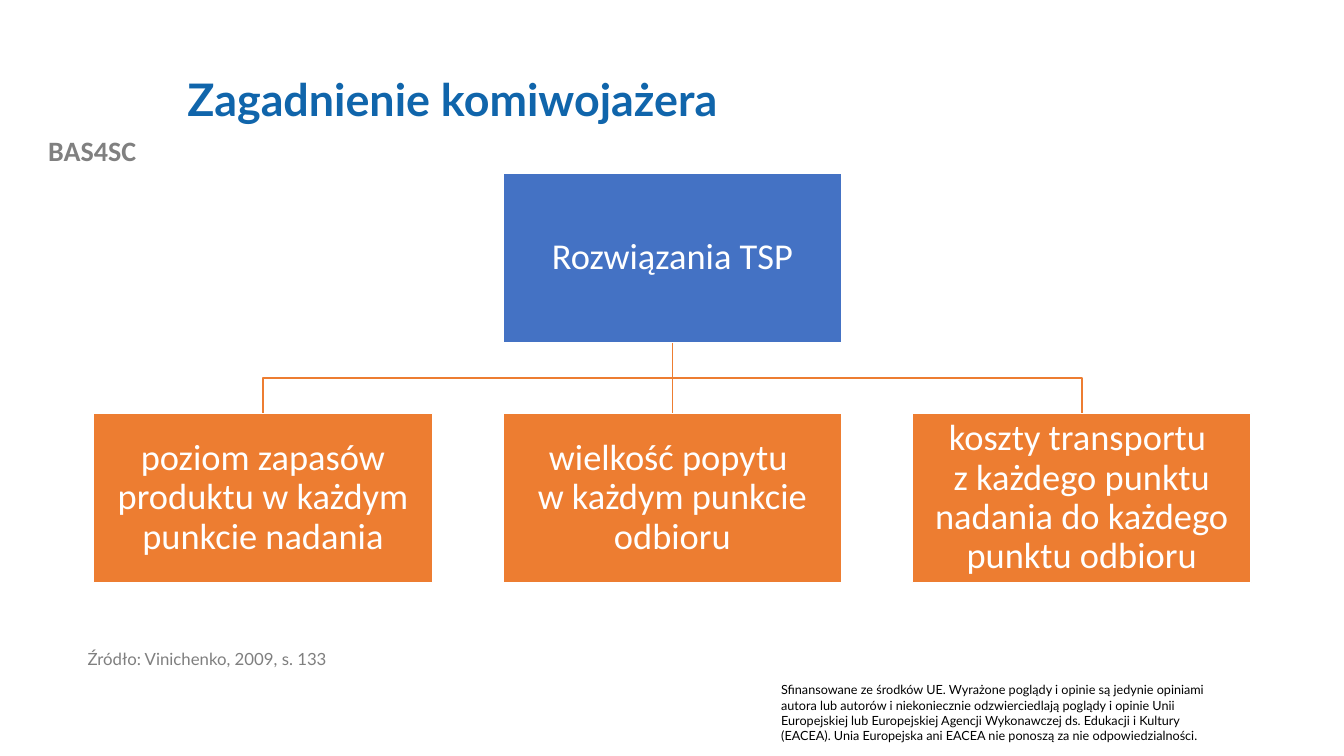
from pptx import Presentation
from pptx.dml.color import RGBColor as Rgb
from pptx.enum.shapes import MSO_CONNECTOR as Conn, MSO_SHAPE as Kind
from pptx.enum.text import MSO_ANCHOR as Anchor, PP_ALIGN as Align
from pptx.oxml.ns import qn
from pptx.util import Pt
from lxml.etree import SubElement

PX = 9144
HUES = {
    "blue": "4472C4", "orange": "ED7D31", "white": "FFFFFF", "black": "000000",
    "title": "1065AB", "label": "808080", "source": "7F7F7F",
}
WIDE, HIGH = 336, 168
LEFT, STEP = 93, 406
TOP, LOW = 172, 410
MID = LEFT + STEP + WIDE // 2
NOTE = (
    "Sfinansowane ze środków UE. Wyrażone poglądy i opinie są jedynie opiniami "
    "autora lub autorów i niekoniecznie odzwierciedlają poglądy i opinie Unii "
    "Europejskiej lub Europejskiej Agencji Wykonawczej ds. Edukacji i Kultury "
    "(EACEA). Unia Europejska ani EACEA nie ponoszą za nie odpowiedzialności."
)
CAUSES = [
    "poziom zapasów produktu w każdym punkcie nadania",
    "wielkość popytu \nw każdym punkcie odbioru",
    "koszty transportu \nz każdego punktu nadania do każdego punktu odbioru",
]


def hue(name):
    return Rgb.from_string(HUES[name])


def scale(*sizes):
    return [size * PX for size in sizes]


def write(frame, text, size, face, tint, bold=False, align=Align.LEFT,
          anchor=Anchor.TOP, space=1.0):
    frame.word_wrap = True
    frame.vertical_anchor = anchor
    para = frame.paragraphs[0]
    para.alignment = align
    para.line_spacing = space
    for turn, line in enumerate(text.split("\n")):
        if turn:
            para.add_line_break()
        run = para.add_run()
        run.text = line
        font = run.font
        font.size, font.name, font.bold = Pt(size), face, bold
        font.color.rgb = hue(tint)


def label(slide, area, text, size, face, tint, **style):
    box = slide.shapes.add_textbox(*scale(*area))
    write(box.text_frame, text, size, face, tint, **style)


def block(slide, left, top, text, tint):
    box = slide.shapes.add_shape(Kind.RECTANGLE, *scale(left, top, WIDE, HIGH))
    box.shadow.inherit = False
    box.fill.solid()
    box.fill.fore_color.rgb = hue(tint)
    box.line.color.rgb = hue("white")
    box.line.width = Pt(1)
    frame = box.text_frame
    frame.margin_left = frame.margin_right = 2 * PX
    frame.margin_top = frame.margin_bottom = 2 * PX
    write(frame, text, 26, "Calibri", "white", align=Align.CENTER,
          anchor=Anchor.MIDDLE, space=0.9)


def stroke(line):
    line.color.rgb = hue("orange")
    line.width = Pt(1)


def stem(slide, start, end):
    link = slide.shapes.add_connector(
        Conn.STRAIGHT, *scale(MID, start, MID, end))
    stroke(link.line)
    SubElement(link._element.spPr, qn("a:effectLst"))


def branch(slide, start, end, goal):
    bend = (start + end) // 2
    pen = slide.shapes.build_freeform(MID, start, scale=PX)
    pen.add_line_segments([(MID, bend), (goal, bend), (goal, end)], close=False)
    path = pen.convert_to_shape()
    path.shadow.inherit = False
    path.fill.background()
    stroke(path.line)


def tree(slide):
    base = TOP + HIGH
    for side in (1, -1):
        branch(slide, base, LOW, MID + side * STEP)
    stem(slide, base, LOW)
    block(slide, LEFT + STEP, TOP, "Rozwiązania TSP", "blue")
    for spot, cause in enumerate(CAUSES):
        block(slide, LEFT + spot * STEP, LOW, cause, "orange")


def main():
    deck = Presentation()
    deck.slide_width, deck.slide_height = scale(1333, 750)
    slide = deck.slides.add_slide(deck.slide_layouts[6])
    label(slide, (0, 128, 183, 44), "BAS4SC", 20, "Calibri", "label",
          bold=True, align=Align.CENTER)
    label(slide, (765, 672, 463, 71), NOTE, 9, "Lato", "black")
    label(slide, (77, 641, 501, 52), "Źródło: Vinichenko, 2009, s. 133",
          12, "Lato", "source", space=0.9)
    label(slide, (176, 40, 1157, 122), "Zagadnienie komiwojażera",
          32, "Lato", "title", bold=True, anchor=Anchor.MIDDLE, space=0.9)
    tree(slide)
    deck.save("out.pptx")


if __name__ == "__main__":
    main()
